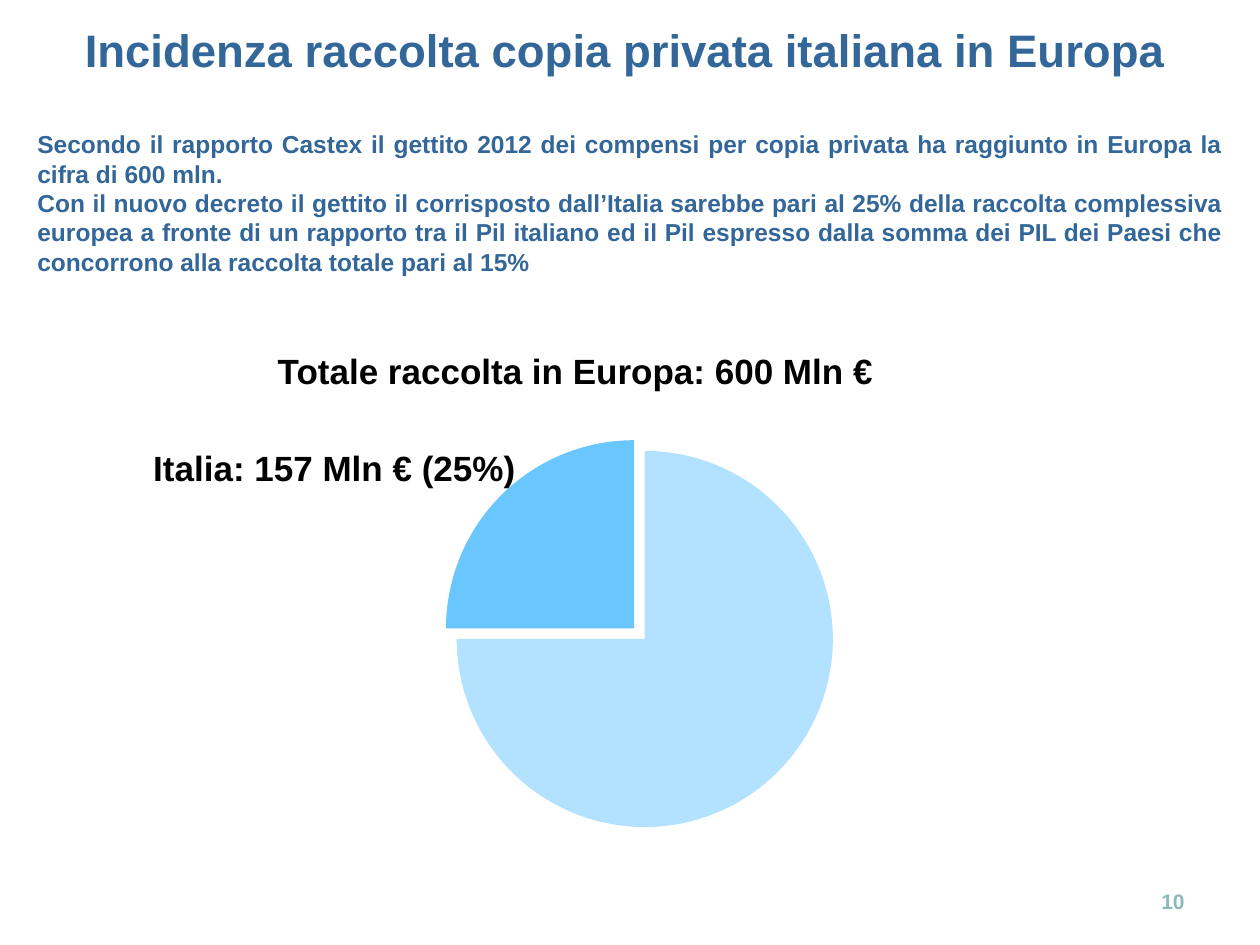
from dataclasses import dataclass

from lxml import etree
from pptx import Presentation
from pptx import util as u
from pptx.chart.data import CategoryChartData
from pptx.dml.color import RGBColor
from pptx.enum import chart as charts, text
from pptx.oxml import ns

PX = 914400 // 126


@dataclass(frozen=True)
class Theme:
    font: str = "Arial"
    heading: str = "336699"
    label: str = "010000"
    page: str = "8CBABA"
    chart_text: str = "009999"
    europe: str = "B2E2FF"
    italy: str = "6AC6FF"
    title_pt: int = 26
    body_pt: int = 14
    label_pt: int = 20
    page_pt: int = 12
    chart_pt: int = 10


@dataclass(frozen=True)
class Box:
    left: int
    top: int
    width: int
    height: int

    def emu(self) -> tuple:
        return tuple(u.Emu(v * PX) for v in (self.left, self.top, self.width, self.height))


@dataclass(frozen=True)
class Slice:
    name: str
    value: int
    color: str
    explosion: int


THEME = Theme()
ALIGN = text.PP_ALIGN
ANCHOR = text.MSO_ANCHOR


def add_text(slide, box: Box, *paragraphs: str, size: int, color: str,
             align=ALIGN.CENTER, anchor=ANCHOR.TOP, wrap: bool = True) -> None:
    frame = slide.shapes.add_textbox(*box.emu()).text_frame
    frame.word_wrap = wrap
    frame.vertical_anchor = anchor
    for index, words in enumerate(paragraphs):
        paragraph = frame.add_paragraph() if index else frame.paragraphs[0]
        paragraph.alignment = align
        run = paragraph.add_run()
        run.text = words
        run.font.name, run.font.size, run.font.bold = THEME.font, u.Pt(size), True
        run.font.color.rgb = RGBColor.from_string(color)


def add_element(parent, tag: str, value) -> None:
    etree.SubElement(parent, ns.qn(tag)).set("val", str(value))


def place_plot(chart, **fractions: float) -> None:
    """Fix the inner plot area as fractions of the chart."""
    plot_area = chart.plots[0]._element.getparent()
    for old in plot_area.findall(ns.qn("c:layout")):
        plot_area.remove(old)
    layout = etree.Element(ns.qn("c:layout"))
    plot_area.insert(0, layout)
    manual = etree.SubElement(layout, ns.qn("c:manualLayout"))
    settings = {"layoutTarget": "inner", "xMode": "edge", "yMode": "edge", **fractions}
    for tag, value in settings.items():
        add_element(manual, f"c:{tag}", value)


def add_pie(slide, box: Box, slices: list[Slice]) -> None:
    data = CategoryChartData()
    data.categories = [part.name for part in slices]
    data.add_series("Series 1", [part.value for part in slices])
    chart = slide.shapes.add_chart(charts.XL_CHART_TYPE.PIE, *box.emu(), data).chart
    chart.has_legend = chart.has_title = False
    chart.font.name, chart.font.size = THEME.font, u.Pt(THEME.chart_pt)
    chart.font.color.rgb = RGBColor.from_string(THEME.chart_text)
    plot = chart.plots[0]
    plot.vary_by_categories = False
    series = plot.series[0]
    for index, part in enumerate(slices):
        look = series.points[index].format
        look.fill.solid()
        look.fill.fore_color.rgb = RGBColor.from_string(part.color)
        look.line.fill.background()
        if part.explosion:
            data_point = series._element.findall(ns.qn("c:dPt"))[index]
            explosion = etree.Element(ns.qn("c:explosion"))
            explosion.set("val", str(part.explosion))
            data_point.find(ns.qn("c:spPr")).addprevious(explosion)
    place_plot(chart, x=0.27, y=0.15, w=0.48, h=0.75)


def main() -> None:
    deck = Presentation()
    deck.slide_width, deck.slide_height = u.Inches(10), u.Inches(7.5)
    slide = deck.slides.add_slide(deck.slide_layouts[6])

    # Heading and introduction
    add_text(slide, Box(15, 16, 1221, 68),
             "Incidenza raccolta copia privata italiana in Europa",
             size=THEME.title_pt, color=THEME.heading)
    add_text(slide, Box(25, 123, 1211, 161),
             "Secondo il rapporto Castex il gettito 2012 dei compensi per copia privata "
             "ha raggiunto in Europa la cifra di 600 mln.",
             "Con il nuovo decreto il gettito il corrisposto dall’Italia sarebbe pari al 25% "
             "della raccolta complessiva europea a fronte di un rapporto tra il Pil italiano "
             "ed il Pil espresso dalla somma dei PIL dei Paesi che concorrono alla raccolta "
             "totale pari al 15%",
             size=THEME.body_pt, color=THEME.heading, align=ALIGN.JUSTIFY)

    # Pie of the European total, with the Italian share pulled out
    add_pie(slide, Box(245, 375, 784, 503),
            [Slice("1", 75, THEME.europe, 0), Slice("2", 25, THEME.italy, 8)])

    # Pie labels
    for box, label in ((Box(258, 343, 635, 55), "Totale raccolta in Europa: 600 Mln €"),
                       (Box(135, 440, 399, 55), "Italia: 157 Mln € (25%)")):
        add_text(slide, box, label, size=THEME.label_pt, color=THEME.label, wrap=False)

    # Page number
    add_text(slide, Box(903, 876, 294, 50), "10", size=THEME.page_pt,
             color=THEME.page, align=ALIGN.RIGHT, anchor=ANCHOR.MIDDLE)

    deck.save("out.pptx")


if __name__ == "__main__":
    main()
